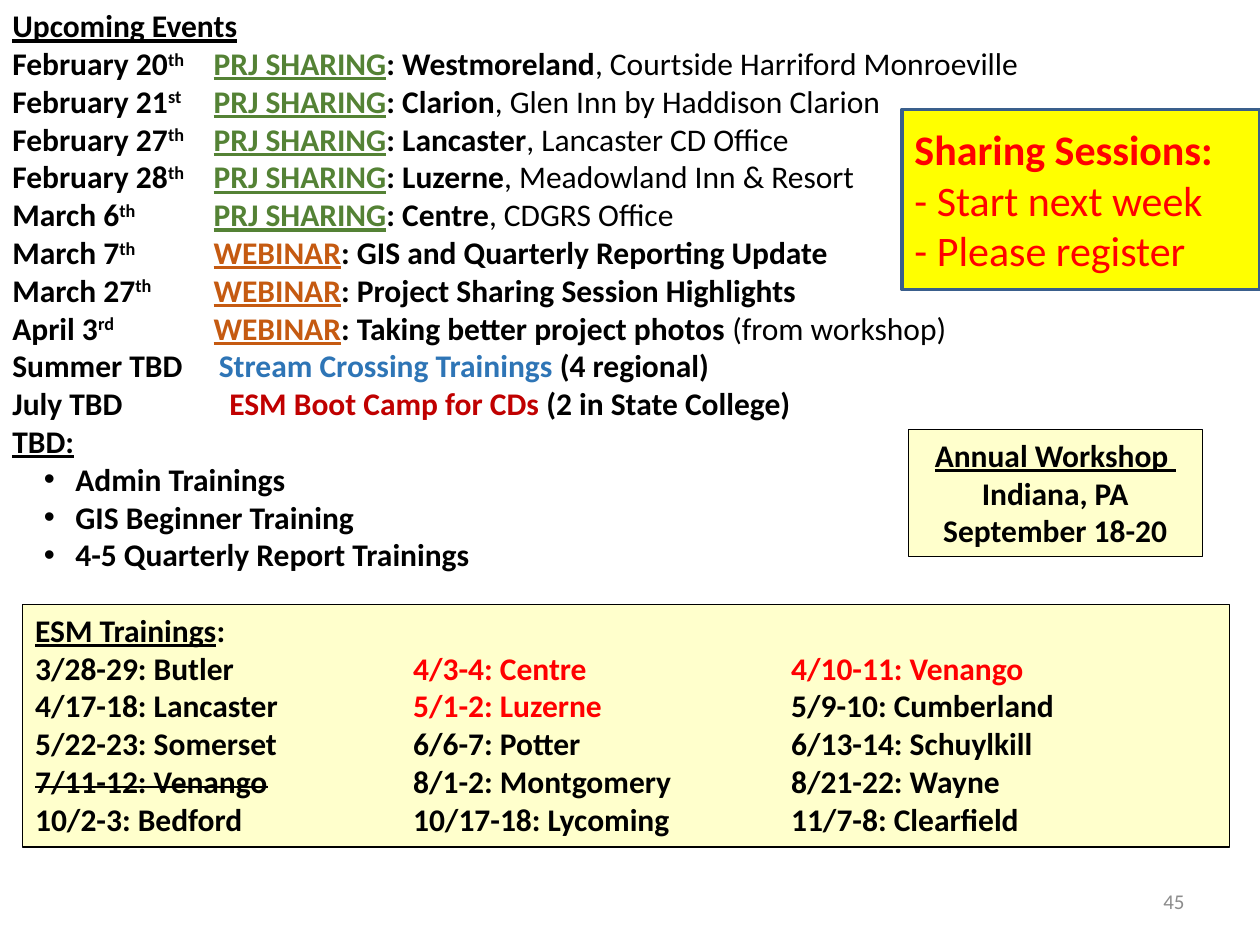
from lxml import etree
from pptx import Presentation
from pptx.dml.color import RGBColor
from pptx.enum.shapes import MSO_SHAPE
from pptx.enum.text import MSO_ANCHOR, PP_ALIGN
from pptx.oxml.ns import qn
from pptx.util import Pt

RECTANGLE = MSO_SHAPE.RECTANGLE
TOP, MIDDLE = MSO_ANCHOR.TOP, MSO_ANCHOR.MIDDLE
LEFT, CENTER, RIGHT = PP_ALIGN.LEFT, PP_ALIGN.CENTER, PP_ALIGN.RIGHT

FONT = "Calibri"
COLORS = {
    "black": "000000", "green": "548235", "orange": "C55A11", "blue": "2E75B6",
    "dark red": "C00000", "red": "FF0000", "gray": "8C8C8C",
    "cream": "FFFFCC", "yellow": "FFFF00", "navy": "3A5F8C",
}
SHARING = ("PRJ SHARING", "green")
WEBINAR = ("WEBINAR", "orange")

# day, ordinal suffix, kind of event, bold title, plain detail
DATED_EVENTS = [
    ("February 20", "th", SHARING, ": Westmoreland", ", Courtside Harriford Monroeville"),
    ("February 21", "st", SHARING, ": Clarion", ", Glen Inn by Haddison Clarion"),
    ("February 27", "th", SHARING, ": Lancaster", ", Lancaster CD Office"),
    ("February 28", "th", SHARING, ": Luzerne", ", Meadowland Inn & Resort"),
    ("March 6", "th", SHARING, ": Centre", ", CDGRS Office"),
    ("March 7", "th", WEBINAR, ": GIS and Quarterly Reporting Update", ""),
    ("March 27", "th", WEBINAR, ": Project Sharing Session Highlights", ""),
    ("April 3", "rd", WEBINAR, ": Taking better project photos ", "(from workshop)"),
]
# period, title, colour, note, tab stop
OPEN_EVENTS = [
    ("Summer TBD", "Stream Crossing Trainings", "blue", " (4 regional)", 118),
    ("July TBD", "ESM Boot Camp for CDs ", "dark red", "(2 in State College)", 124),
]
OPEN_TRAININGS = ["Admin Trainings", "GIS Beginner Training", "4-5 Quarterly Report Trainings"]
ESM_TRAININGS = [
    ("3/28-29: Butler", "4/3-4: Centre", "4/10-11: Venango"),
    ("4/17-18: Lancaster", "5/1-2: Luzerne", "5/9-10: Cumberland"),
    ("5/22-23: Somerset", "6/6-7: Potter", "6/13-14: Schuylkill"),
    ("7/11-12: Venango", "8/1-2: Montgomery", "8/21-22: Wayne"),
    ("10/2-3: Bedford", "10/17-18: Lycoming", "11/7-8: Clearfield"),
]
ESM_RED = {"4/3-4: Centre", "4/10-11: Venango", "5/1-2: Luzerne"}
ESM_CANCELLED = {"7/11-12: Venango"}


def color(name):
    return RGBColor.from_string(COLORS[name])


def add_run(paragraph, text, size=18, bold=True, underline=False, ink="black",
            superscript=False, strike=False):
    run = paragraph.add_run()
    run.text = text
    font = run.font
    font.name, font.size, font.bold = FONT, Pt(size), bold
    font.underline = underline
    font.color.rgb = color(ink)
    properties = run._r.get_or_add_rPr()
    if superscript:
        properties.set("baseline", "30000")
    if strike:
        properties.set("strike", "sngStrike")


def add_paragraph(frame, align=LEFT, tabs=(), bullet=False):
    """Return the frame's empty first paragraph, or a new one after it."""
    first = frame.paragraphs[0]
    paragraph = frame.add_paragraph() if first.runs else first
    properties = paragraph._p.get_or_add_pPr()
    if bullet:
        properties.set("marL", str(Pt(36)))
        properties.set("indent", str(Pt(-18)))
        etree.SubElement(properties, qn("a:buFont"), typeface="Arial")
        etree.SubElement(properties, qn("a:buChar"), char="•")
    if tabs:
        stops = etree.SubElement(properties, qn("a:tabLst"))
        for stop in tabs:
            etree.SubElement(stops, qn("a:tab"), pos=str(Pt(stop)), algn="l")
    paragraph.alignment = align
    return paragraph


def add_line(frame, text, align=LEFT, bullet=False, **style):
    add_run(add_paragraph(frame, align, bullet=bullet), text, **style)


def add_text_box(slide, left, top, width, height, anchor=TOP):
    box = slide.shapes.add_textbox(Pt(left), Pt(top), Pt(width), Pt(height))
    box.text_frame.word_wrap = True
    box.text_frame.vertical_anchor = anchor
    return box.text_frame


def add_panel(slide, left, top, width, height, fill="cream", line="black",
              line_width=0.75, anchor=TOP):
    panel = slide.shapes.add_shape(RECTANGLE, Pt(left), Pt(top), Pt(width), Pt(height))
    panel.shadow.inherit = False
    panel.fill.solid()
    panel.fill.fore_color.rgb = color(fill)
    panel.line.color.rgb = color(line)
    panel.line.width = Pt(line_width)
    panel.text_frame.word_wrap = True
    panel.text_frame.vertical_anchor = anchor
    return panel.text_frame


def add_events(slide):
    frame = add_text_box(slide, 0, 0, 714, 456)
    add_line(frame, "Upcoming Events", underline=True)
    for day, suffix, (kind, ink), title, detail in DATED_EVENTS:
        paragraph = add_paragraph(frame, tabs=[115])
        add_run(paragraph, day)
        add_run(paragraph, suffix, superscript=True)
        add_run(paragraph, "\t")
        add_run(paragraph, kind, ink=ink, underline=True)
        add_run(paragraph, title)
        if detail:
            add_run(paragraph, detail, bold=False)
    for period, title, ink, note, stop in OPEN_EVENTS:
        paragraph = add_paragraph(frame, tabs=[stop])
        add_run(paragraph, period + "\t")
        add_run(paragraph, title, ink=ink)
        add_run(paragraph, note)
    add_line(frame, "TBD:", underline=True)
    for training in OPEN_TRAININGS:
        add_line(frame, training, bullet=True)


def add_esm_trainings(slide):
    frame = add_panel(slide, 13, 345.5, 689.5, 138.5)
    heading = add_paragraph(frame)
    add_run(heading, "ESM Trainings", underline=True)
    add_run(heading, ":")
    for row in ESM_TRAININGS:
        paragraph = add_paragraph(frame, tabs=[216, 432])
        for column, training in enumerate(row):
            if column:
                add_run(paragraph, "\t")
            add_run(paragraph, training, ink="red" if training in ESM_RED else "black",
                    strike=training in ESM_CANCELLED)


def add_workshop(slide):
    frame = add_panel(slide, 519, 245.5, 168, 72.5)
    add_line(frame, "Annual Workshop ", CENTER, underline=True)
    add_line(frame, "Indiana, PA", CENTER)
    add_line(frame, "September 18-20", CENTER)


def add_sharing_callout(slide):
    frame = add_panel(slide, 515.5, 62.5, 204.5, 103, "yellow", "navy", 2, MIDDLE)
    add_line(frame, "Sharing Sessions:", size=24, ink="red")
    for text in ("- Start next week", "- Please register"):
        add_line(frame, text, size=24, ink="red", bold=False)


def main():
    presentation = Presentation()
    presentation.slide_width, presentation.slide_height = Pt(720), Pt(540)
    slide = presentation.slides.add_slide(presentation.slide_layouts[6])
    add_events(slide)
    add_esm_trainings(slide)
    add_workshop(slide)
    add_sharing_callout(slide)
    number = add_text_box(slide, 516, 500.5, 168, 28.75, MIDDLE)
    add_line(number, "45", RIGHT, size=12, bold=False, ink="gray")
    presentation.save("out.pptx")


if __name__ == "__main__":
    main()
